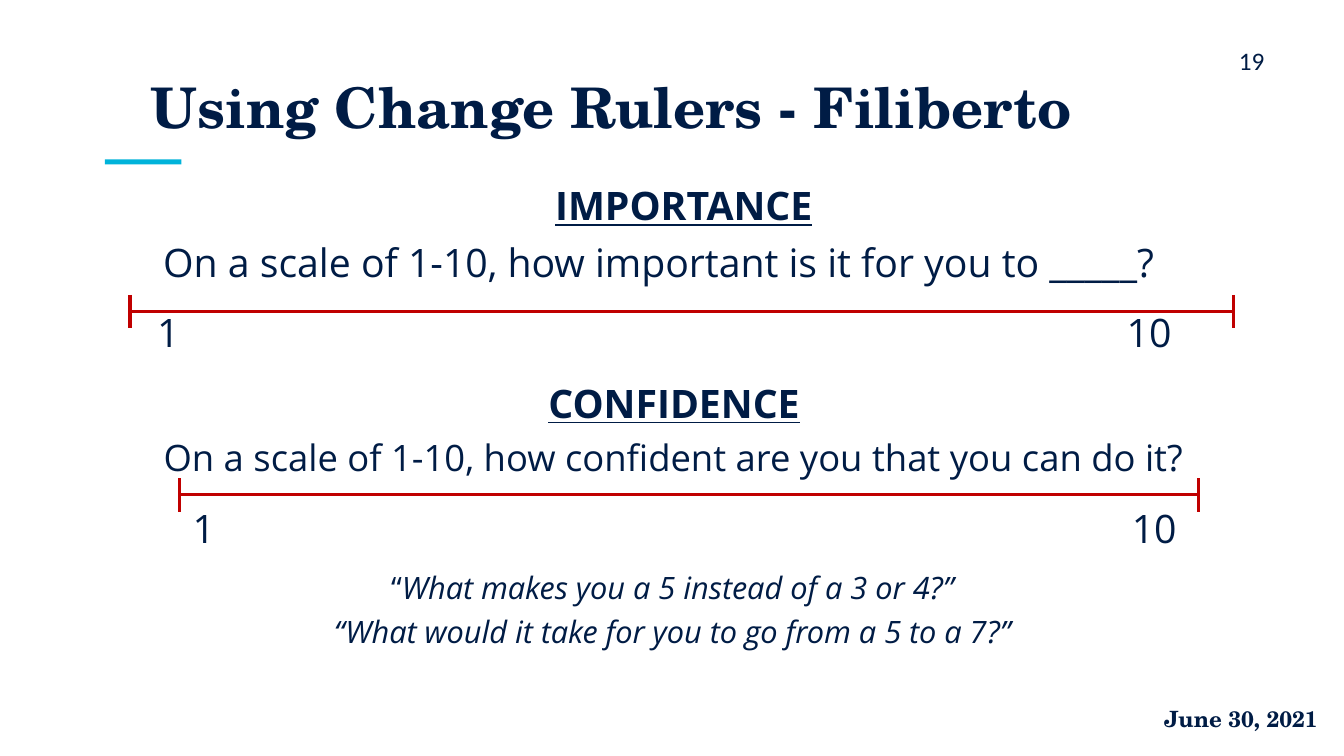
from lxml import etree
from pptx import Presentation
from pptx.dml.color import RGBColor
from pptx.enum import shapes, text
from pptx.oxml import ns
from pptx.util import Inches, Pt

COLORS = {"ink": "001C45", "ruler": "C00000", "accent": "00B3DA"}
SANS, SERIF, NUMBER_FONT = "Open Sans", "TeX Gyre Schola", "Calibri"
LEFT, CENTER, RIGHT = text.PP_ALIGN.LEFT, text.PP_ALIGN.CENTER, text.PP_ALIGN.RIGHT
TICK = 0.33

TITLE = "Using Change Rulers - Filiberto"
# Question boxes: left, top, width, height
QUESTIONS = [
    dict(box=(1.52, 1.66, 10.52, 1.19), heading="IMPORTANCE", size=28, align=LEFT,
         question="On a scale of 1-10, how important is it for you to _____?"),
    dict(box=(1.14, 3.62, 11.09, 1.15), heading="CONFIDENCE", size=26, align=CENTER,
         question="On a scale of 1-10, how confident are you that you can do it?"),
]
# low and high: left edge of the first number, right edge of the last
RULERS = [
    dict(start=1.29, end=12.23, y=3.09, labels_top=3.01, low=1.56, high=11.62),
    dict(start=1.78, end=11.89, y=4.91, labels_top=4.95, low=1.91, high=11.67),
]
SCALE_ENDS = ("1", "10")
OPENING_QUOTE = "“"
QUOTES = ["What makes you a 5 instead of a 3 or 4?”",
          "“What would it take for you to go from a 5 to a 7?”"]
PAGE_NUMBER, DATE = "19", "June 30, 2021"


def rgb(name):
    return RGBColor.from_string(COLORS[name])


def add_run(paragraph, words, size=28, font=SANS, bold=False, italic=False,
            underline=False, align=CENTER, spacing=None):
    run = paragraph.add_run()
    run.text = words
    run.font.name, run.font.size = font, Pt(size)
    run.font.bold, run.font.italic, run.font.underline = bold, italic, underline
    run.font.color.rgb = rgb("ink")
    paragraph.alignment = align
    if spacing:
        paragraph.line_spacing = spacing


def add_frame(slide, box):
    frame = slide.shapes.add_textbox(*map(Inches, box)).text_frame
    frame.word_wrap = True
    return frame


def add_line(slide, x1, y1, x2, y2):
    line = slide.shapes.add_connector(
        shapes.MSO_CONNECTOR.STRAIGHT, *map(Inches, (x1, y1, x2, y2)))
    line.line.color.rgb = rgb("ruler")
    line.line.width = Pt(2.25)
    etree.SubElement(line._element.spPr, ns.qn("a:effectLst"))


def add_ruler(slide, start, end, y, labels_top, low, high):
    add_line(slide, start, y, end, y)
    for x in (start, end):
        add_line(slide, x, y - TICK / 2, x, y + TICK / 2)
    labels = add_frame(slide, (low, labels_top, high - low + 0.2, 0.57))
    labels.margin_left = 0
    paragraph = labels.paragraphs[0]
    tabs = etree.SubElement(paragraph._p.get_or_add_pPr(), ns.qn("a:tabLst"))
    etree.SubElement(tabs, ns.qn("a:tab"), pos=str(Inches(high - low)), algn="r")
    add_run(paragraph, "\t".join(SCALE_ENDS), align=LEFT)


def main():
    deck = Presentation()
    deck.slide_width, deck.slide_height = Inches(13.33), Inches(7.5)
    slide = deck.slides.add_slide(deck.slide_layouts[5])

    accent = slide.shapes.add_shape(
        shapes.MSO_SHAPE.RECTANGLE, *map(Inches, (1.04, 1.58, 0.76, 0.05)))
    accent.shadow.inherit = False
    accent.fill.solid()
    accent.fill.fore_color.rgb = rgb("accent")
    accent.line.fill.background()

    title = slide.shapes.title
    title.left, title.top, title.width, title.height = map(
        Inches, (1.29, 0.42, 9.55, 1.26))
    title.text_frame.auto_size = text.MSO_AUTO_SIZE.NONE
    title.text_frame.word_wrap = False
    title.text_frame.vertical_anchor = text.MSO_ANCHOR.MIDDLE
    add_run(title.text_frame.paragraphs[0], TITLE, size=40, font=SERIF, bold=True)

    for item in QUESTIONS:
        frame = add_frame(slide, item["box"])
        add_run(frame.paragraphs[0], item["heading"], bold=True, underline=True,
                spacing=1.2)
        add_run(frame.add_paragraph(), item["question"], size=item["size"],
                align=item["align"], spacing=1.2)

    for ruler in RULERS:
        add_ruler(slide, **ruler)

    quotes = add_frame(slide, (2.5, 5.52, 8.34, 0.96))
    add_run(quotes.paragraphs[0], OPENING_QUOTE, size=22)
    for index, quote in enumerate(QUOTES):
        paragraph = quotes.add_paragraph() if index else quotes.paragraphs[0]
        add_run(paragraph, quote, size=22, italic=True, spacing=1.2)

    number = add_frame(slide, (11.96, 0.4, 0.91, 0.4))
    add_run(number.paragraphs[0], PAGE_NUMBER, size=18, font=NUMBER_FONT)
    date = add_frame(slide, (11, 6.95, 2.17, 0.4))
    add_run(date.paragraphs[0], DATE, size=16, font=SERIF, bold=True, align=RIGHT)

    deck.save("out.pptx")


if __name__ == "__main__":
    main()
